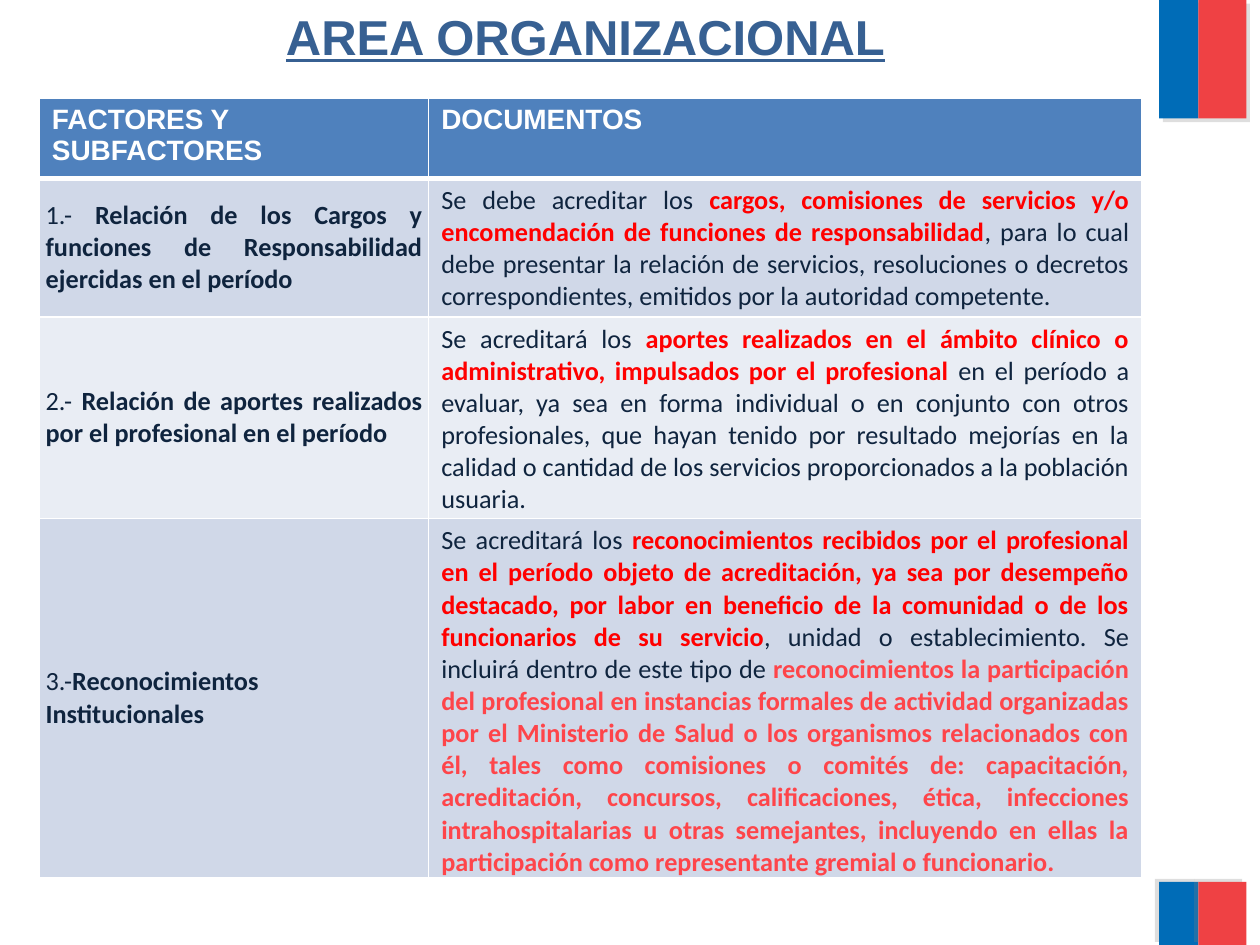
from dataclasses import dataclass
from typing import Optional

import lxml.etree
import pptx
import pptx.dml.color
import pptx.enum.shapes
import pptx.enum.text
import pptx.oxml
import pptx.oxml.ns
import pptx.util

Pt = pptx.util.Pt
ALIGN = pptx.enum.text.PP_ALIGN
ANCHOR = pptx.enum.text.MSO_ANCHOR

COLORS = {
    "flag_blue": "006CB7",
    "flag_red": "EF4144",
    "shadow": "808080",
    "title": "376092",
    "header": "4F81BD",
    "band_dark": "D0D8E8",
    "band_light": "E9EDF4",
    "white": "FFFFFF",
    "text": "0F243E",
    "red": "FF0000",
    "coral": "FE454A",
}


@dataclass(frozen=True)
class FlagBlock:
    left: float
    top: float
    width: float
    height: float
    color: str
    shadow_angle: int


@dataclass(frozen=True)
class TextRun:
    text: str
    color: str = "text"
    bold: bool = False
    size: float = 15
    font: str = "Calibri"
    underline: Optional[bool] = None


@dataclass(frozen=True)
class TableRow:
    height: float
    fill: str
    factor: list[TextRun]
    documents: list[TextRun]


def heading(text: str) -> list[TextRun]:
    return [TextRun(text, "white", True, 16, "Arial")]


FLAG_BLOCKS = [
    FlagBlock(662.4, -0.5, 22.4, 68.2, "flag_blue", 45),
    FlagBlock(684.8, 0, 27.4, 67.7, "flag_red", 45),
    FlagBlock(662.4, 504, 22.4, 36, "flag_blue", 215),
    FlagBlock(684.8, 504, 27.4, 36, "flag_red", 215),
]

TITLE = [TextRun("AREA ORGANIZACIONAL", "title", True, 28, "Arial", True)]

COLUMN_WIDTHS = [222.5, 407.5]

ROWS = [
    TableRow(26.6, "header", heading("FACTORES Y SUBFACTORES"), heading("DOCUMENTOS")),
    TableRow(
        79.2,
        "band_dark",
        [
            TextRun("1.- "),
            TextRun("Relación de los Cargos y funciones de Responsabilidad ejercidas en el período", bold=True),
        ],
        [
            TextRun("Se debe acreditar los "),
            TextRun("cargos, comisiones de servicios y/o encomendación de funciones de responsabilidad", "red", True),
            TextRun(
                ", para lo cual debe presentar la relación de servicios, resoluciones o decretos "
                "correspondientes, emitidos por la autoridad competente. "
            ),
        ],
    ),
    TableRow(
        115.2,
        "band_light",
        [
            TextRun("2.- "),
            TextRun("Relación de aportes realizados por el profesional en el período", bold=True),
        ],
        [
            TextRun("Se acreditará los "),
            TextRun(
                "aportes realizados en el ámbito clínico o administrativo, impulsados por el profesional ",
                "red", True,
            ),
            TextRun(
                "en el período a evaluar, ya sea en forma individual o en conjunto con otros profesionales, "
                "que hayan tenido por resultado mejorías en la calidad o cantidad de los servicios "
                "proporcionados a la población usuaria. "
            ),
        ],
    ),
    TableRow(
        205.2,
        "band_dark",
        [TextRun("3.-"), TextRun("Reconocimientos Institucionales", bold=True)],
        [
            TextRun("Se acreditará los "),
            TextRun(
                "reconocimientos recibidos por el profesional en el período objeto de acreditación, ya sea por "
                "desempeño destacado, por labor en beneficio de la comunidad o de los funcionarios de su servicio",
                "red", True,
            ),
            TextRun(", unidad o establecimiento. Se incluirá dentro de este tipo de "),
            TextRun(
                "reconocimientos la participación del profesional en instancias formales de actividad organizadas "
                "por el Ministerio de Salud o los organismos relacionados con él, tales como comisiones o comités "
                "de: capacitación, acreditación, concursos, calificaciones, ética, infecciones intrahospitalarias "
                "u otras semejantes, incluyendo en ellas la participación como representante gremial o funcionario.",
                "coral", True,
            ),
        ],
    ),
]


def rgb(name: str) -> pptx.dml.color.RGBColor:
    return pptx.dml.color.RGBColor.from_string(COLORS[name])


def add_element(parent, tag: str, **attributes):
    element = lxml.etree.SubElement(parent, pptx.oxml.ns.qn(tag))
    for key, value in attributes.items():
        element.set(key, str(value))
    return element


def add_flag_block(slide, block: FlagBlock) -> None:
    shape = slide.shapes.add_shape(
        pptx.enum.shapes.MSO_SHAPE.RECTANGLE,
        Pt(block.left), Pt(block.top), Pt(block.width), Pt(block.height),
    )
    shape.fill.solid()
    shape.fill.fore_color.rgb = rgb(block.color)
    shape.line.fill.background()
    shape.shadow.inherit = False
    effects = shape._element.spPr.find(pptx.oxml.ns.qn("a:effectLst"))
    shadow = add_element(
        effects, "a:outerShdw", blurRad=0, dist=Pt(3), dir=block.shadow_angle * 60000, rotWithShape=0
    )
    color = add_element(shadow, "a:srgbClr", val=COLORS["shadow"])
    add_element(color, "a:alpha", val=25000)


def write_runs(paragraph, runs: list[TextRun], alignment) -> None:
    paragraph.alignment = alignment
    for item in runs:
        run = paragraph.add_run()
        run.text = item.text
        run.font.name = item.font
        run.font.size = Pt(item.size)
        run.font.bold = item.bold
        run.font.underline = item.underline
        run.font.color.rgb = rgb(item.color)


def add_title(slide) -> None:
    box = slide.shapes.add_textbox(Pt(16.6), Pt(0), Pt(635.8), Pt(41))
    box.text_frame.word_wrap = True
    box.text_frame.auto_size = pptx.enum.text.MSO_AUTO_SIZE.SHAPE_TO_FIT_TEXT
    write_runs(box.text_frame.paragraphs[0], TITLE, ALIGN.CENTER)


def style_cell(cell, fill: str, row_index: int) -> None:
    properties = cell._tc.get_or_add_tcPr()
    widths = {"L": 1, "R": 1, "T": 3 if row_index == 1 else 1, "B": 3 if row_index == 0 else 1}
    for side, width in widths.items():
        border = add_element(properties, f"a:ln{side}", w=Pt(width))
        border_fill = add_element(border, "a:solidFill")
        add_element(border_fill, "a:srgbClr", val=COLORS["white"])
    cell.fill.solid()
    cell.fill.fore_color.rgb = rgb(fill)


def add_factor_table(slide) -> None:
    table = slide.shapes.add_table(
        len(ROWS), len(COLUMN_WIDTHS), Pt(22.5), Pt(56.2),
        Pt(sum(COLUMN_WIDTHS)), Pt(sum(row.height for row in ROWS)),
    ).table
    for column, width in zip(table.columns, COLUMN_WIDTHS):
        column.width = Pt(width)
    for row_index, row in enumerate(ROWS):
        table.rows[row_index].height = Pt(row.height)
        alignment = ALIGN.JUSTIFY if row_index else ALIGN.LEFT
        for column_index, runs in enumerate((row.factor, row.documents)):
            cell = table.cell(row_index, column_index)
            style_cell(cell, row.fill, row_index)
            write_runs(cell.text_frame.paragraphs[0], runs, alignment)
            if row_index and column_index == 0:
                cell.vertical_anchor = ANCHOR.MIDDLE
                cell.margin_left = cell.margin_right = Pt(3.6)
                cell.margin_top = cell.margin_bottom = Pt(0)


def main() -> None:
    presentation = pptx.Presentation()
    presentation.slide_width = Pt(720)
    presentation.slide_height = Pt(540)
    slide = presentation.slides.add_slide(presentation.slide_layouts[6])
    for block in FLAG_BLOCKS:
        add_flag_block(slide, block)
    add_title(slide)
    add_factor_table(slide)
    presentation.save("out.pptx")


if __name__ == "__main__":
    main()
